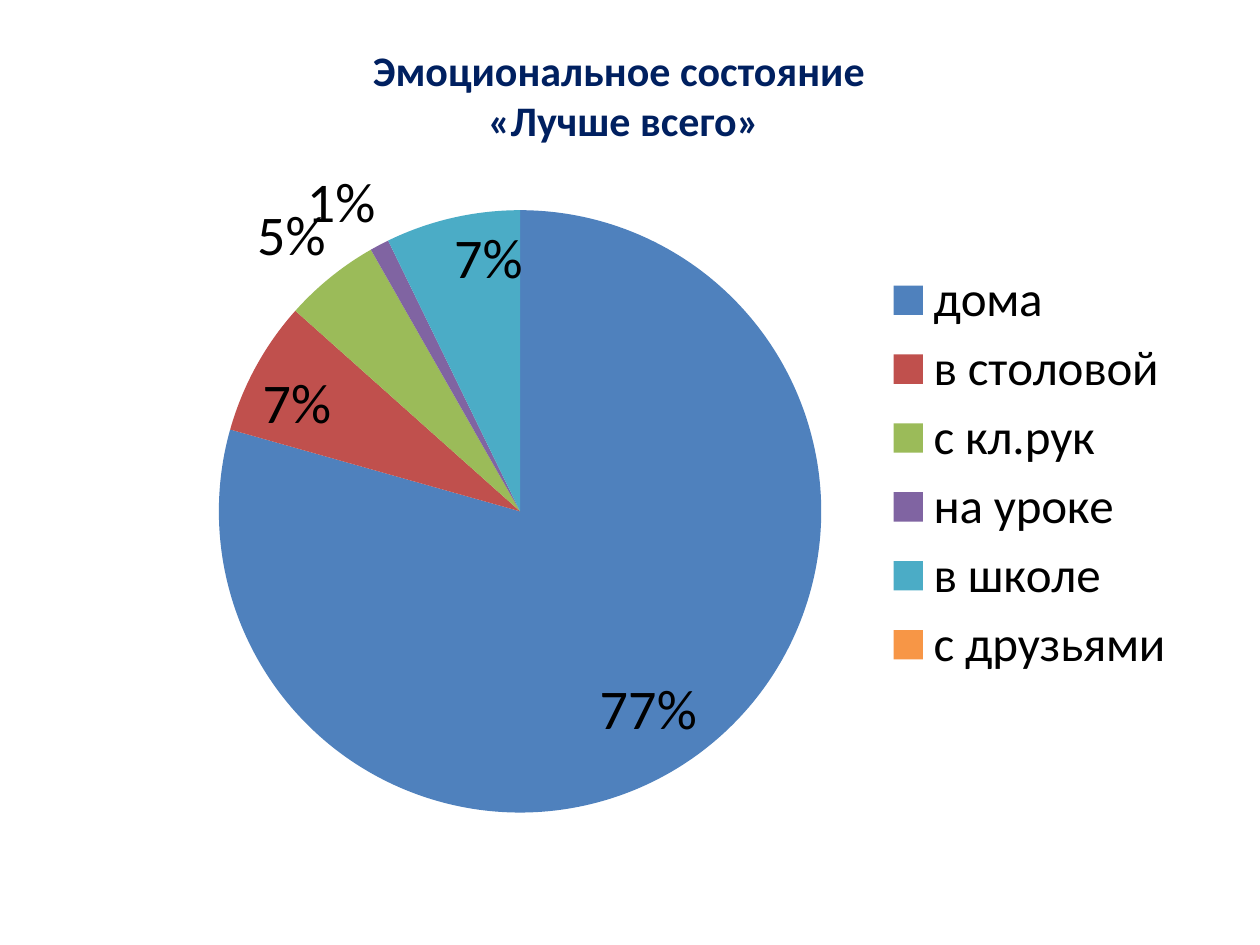
from lxml.etree import SubElement
from pptx import Presentation
from pptx.chart.data import CategoryChartData
from pptx.dml.color import RGBColor
from pptx.enum.chart import XL_CHART_TYPE, XL_LABEL_POSITION, XL_LEGEND_POSITION
from pptx.enum.text import MSO_ANCHOR, PP_ALIGN
from pptx.oxml.ns import qn
from pptx.util import Inches, Pt

WIDTH, HEIGHT = 10, 7.5
FONT = "Calibri"
COLORS = {
    "title": "002060",
    "text": "000000",
    "дома": "4F81BD",
    "в столовой": "C0504D",
    "с кл.рук": "9BBB59",
    "на уроке": "8064A2",
    "в школе": "4BACC6",
    "с друзьями": "F79646",
}
ANSWERS = {
    "дома": 0.77,
    "в столовой": 0.07,
    "с кл.рук": 0.05,
    "на уроке": 0.01,
    "в школе": 0.07,
    "с друзьями": None,
}
NARROW_SLICE = 0.05  # labels of slices up to this share stand outside


def area(left, top, width, height):
    """Turn shares of the slide's size into lengths."""
    return (Inches(left * WIDTH), Inches(top * HEIGHT),
            Inches(width * WIDTH), Inches(height * HEIGHT))


def style_font(font, size, color="text", bold=False):
    font.name = FONT
    font.size = Pt(size)
    font.bold = bold
    font.color.rgb = RGBColor.from_string(COLORS[color])


def write_lines(frame, lines, align=PP_ALIGN.CENTER, **font_format):
    for index, line in enumerate(lines):
        para = frame.add_paragraph() if index else frame.paragraphs[0]
        para.alignment = align
        span = para.add_run()
        span.text = line
        style_font(span.font, **font_format)


def add_title(page, lines, place):
    box = page.shapes.title
    box.left, box.top, box.width, box.height = place
    box.text_frame.word_wrap = True
    box.text_frame.vertical_anchor = MSO_ANCHOR.MIDDLE
    write_lines(box.text_frame, lines, size=24, color="title", bold=True)


def place_plot(chart, **shares):
    """Fix the pie's inner area as shares of the chart."""
    plot_area = chart.plots[0]._element.getparent()
    layout = plot_area.find(qn("c:layout"))
    if layout is None:
        layout = SubElement(plot_area, qn("c:layout"))
        plot_area.insert(0, layout)
    manual = SubElement(layout, qn("c:manualLayout"))
    settings = {"layoutTarget": "inner", "xMode": "edge", "yMode": "edge", **shares}
    for name, value in settings.items():
        SubElement(manual, qn(f"c:{name}")).set("val", str(value))


def style_slices(plot, answers):
    labels = plot.series[0].data_labels
    labels.show_value = True
    labels.show_percentage = False
    labels.number_format = "0%"
    labels.number_format_is_linked = False
    style_font(labels.font, 32)
    for index, (name, share) in enumerate(answers.items()):
        point = plot.series[0].points[index]
        point.format.fill.solid()
        point.format.fill.fore_color.rgb = RGBColor.from_string(COLORS[name])
        if share is not None:
            style_font(point.data_label.font, 32)
            point.data_label.position = (
                XL_LABEL_POSITION.OUTSIDE_END if share <= NARROW_SLICE
                else XL_LABEL_POSITION.INSIDE_END)


def add_pie(page, answers, place):
    data = CategoryChartData(number_format="0%")
    data.categories = list(answers)
    data.add_series("Series 1", list(answers.values()))
    chart = page.shapes.add_chart(XL_CHART_TYPE.PIE, *place, data).chart
    chart.has_title = False
    style_font(chart.font, 18)
    chart.plots[0].vary_by_categories = True
    style_slices(chart.plots[0], answers)
    place_plot(chart, x=0.1, y=0.13, w=0.56, h=0.85)

    # Legend
    chart.has_legend = True
    chart.legend.position = XL_LEGEND_POSITION.RIGHT
    chart.legend.include_in_layout = False
    style_font(chart.legend.font, 28)


def main():
    deck = Presentation()
    deck.slide_width, deck.slide_height = Inches(WIDTH), Inches(HEIGHT)
    page = deck.slides.add_slide(deck.slide_layouts[5])
    # Heading
    add_title(page, ["Эмоциональное состояние ", "«Лучше всего»"],
              area(0.11, 0.04, 0.77, 0.12))
    # Pie of answers
    add_pie(page, ANSWERS, area(0.086, 0.125, 0.86, 0.75))
    deck.save("out.pptx")


if __name__ == "__main__":
    main()
